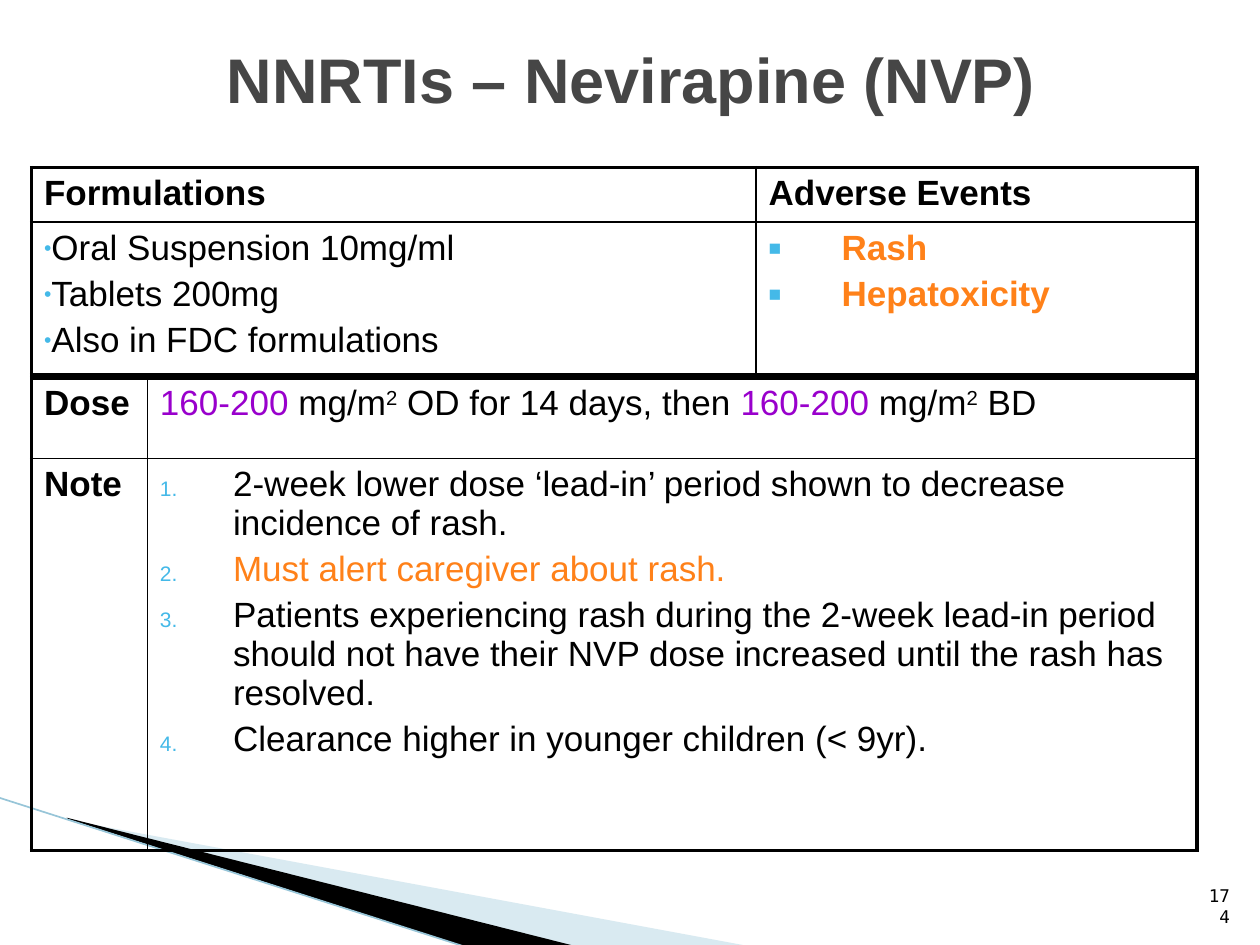
from lxml.etree import SubElement
from pptx import Presentation
from pptx.dml.color import RGBColor
from pptx.enum.shapes import MSO_CONNECTOR as Connector
from pptx.enum.text import MSO_ANCHOR as Anchor, PP_ALIGN as Align
from pptx.oxml.ns import qn
from pptx.util import Inches, Pt

COLORS = {"black": "000000", "title": "464646", "alert": "FF8119", "dose": "9900CC",
          "bullet": "44B9E8", "wedge": "A0CBDC", "edge": "97C5D8"}
FONT = "Arial"
HANGING = 0.58


def add_element(parent, tag, **attributes):
    return SubElement(parent, qn(tag), attributes)


def run(text, color="black", bold=False, raised=False):
    return text, color, bold, raised


class SlideBuilder:
    def __init__(self, slide, colors):
        self.slide = slide
        self.colors = colors

    def rgb(self, name):
        return RGBColor.from_string(self.colors[name])

    def wedge(self, points, color, alpha=None):
        points = [(Inches(x), Inches(y)) for x, y in points]
        builder = self.slide.shapes.build_freeform(*points[0])
        builder.add_line_segments(points[1:], close=True)
        shape = builder.convert_to_shape()
        shape.shadow.inherit = False
        shape.fill.solid()
        shape.fill.fore_color.rgb = self.rgb(color)
        shape.line.fill.background()
        if alpha:
            color_element = shape._element.spPr.find(".//" + qn("a:srgbClr"))
            add_element(color_element, "a:alpha", val=str(alpha * 1000))

    def line(self, start, end, color, width):
        ends = [Inches(value) for value in (*start, *end)]
        connector = self.slide.shapes.add_connector(Connector.STRAIGHT, *ends)
        connector.line.color.rgb = self.rgb(color)
        connector.line.width = Pt(width)
        add_element(connector._element.spPr, "a:effectLst")

    def text(self, box, text, size, font, color, align, anchor, bold=False):
        shape = self.slide.shapes.add_textbox(*[Inches(value) for value in box])
        text_frame = shape.text_frame
        text_frame.word_wrap = True
        text_frame.vertical_anchor = anchor
        text_frame.text = text
        paragraph = text_frame.paragraphs[0]
        paragraph.alignment = align
        self.style(paragraph.runs[0].font, size, font, color, bold)

    def style(self, font, size, name, color, bold):
        font.size = Pt(size)
        font.name = name
        font.bold = bold
        font.color.rgb = self.rgb(color)

    def bullet(self, paragraph, mark, indent):
        properties = paragraph._p.get_or_add_pPr()
        properties.set("marL", str(Inches(indent)))
        properties.set("indent", str(-Inches(indent)))
        color = add_element(properties, "a:buClr")
        add_element(color, "a:srgbClr", val=self.colors["bullet"])
        add_element(properties, "a:buSzPct", val="60000")
        add_element(properties, "a:buFont", typeface=FONT)
        if mark == "number":
            add_element(properties, "a:buAutoNum", type="arabicPeriod")
        else:
            add_element(properties, "a:buChar", char=mark)

    def borders(self, cell, outer_sides):
        properties = cell._tc.get_or_add_tcPr()
        for side in "LRTB":
            width = Pt(2.25 if side in outer_sides else 1)
            border = add_element(properties, f"a:ln{side}", w=str(width))
            fill = add_element(border, "a:solidFill")
            add_element(fill, "a:srgbClr", val=self.colors["black"])

    def fill_cell(self, cell, paragraphs, mark=None, indent=0):
        for index, runs in enumerate(paragraphs):
            text_frame = cell.text_frame
            paragraph = text_frame.add_paragraph() if index else text_frame.paragraphs[0]
            if mark:
                self.bullet(paragraph, mark, indent)
            if index:
                paragraph.space_before = Pt(4)
            for text, color, bold, raised in runs:
                text_run = paragraph.add_run()
                text_run.text = text
                self.style(text_run.font, 20, FONT, color, bold)
                if raised:
                    text_run._r.get_or_add_rPr().set("baseline", "30000")

    def table(self, box, widths, heights, rows):
        frame = self.slide.shapes.add_table(len(heights), len(widths),
                                            *[Inches(value) for value in box])
        table = frame.table
        table.first_row = table.horz_banding = False
        for column, width in zip(table.columns, widths):
            column.width = Inches(width)
        for row, height in zip(table.rows, heights):
            row.height = Inches(height)
        for row_index, row in enumerate(rows):
            for column_index, content in enumerate(row):
                cell = table.cell(row_index, column_index)
                self.borders(cell, "LR"[column_index] + "TB"[row_index])
                cell.fill.background()
                self.fill_cell(cell, *content)


def main():
    presentation = Presentation()
    presentation.slide_width, presentation.slide_height = Inches(10), Inches(7.5)
    slide = presentation.slides.add_slide(presentation.slide_layouts[6])
    builder = SlideBuilder(slide, COLORS)

    builder.wedge([(0.55, 6.51), (5.95, 7.51), (4.56, 7.51), (0.55, 6.5)], "wedge", 40)
    builder.wedge([(0.53, 6.49), (4.57, 7.51), (3.72, 7.52), (0.54, 6.5)], "black")
    builder.line((-0.01, 6.33), (3.71, 7.52), "edge", 0.95)
    builder.text((9.46, 7.01, 0.4, 0.4), "174", 10, "DejaVu Sans Mono", "black",
                 Align.RIGHT, Anchor.BOTTOM)
    builder.text((0.58, 0, 9, 1.25), "NNRTIs – Nevirapine (NVP) ", 36, FONT, "title",
                 Align.CENTER, Anchor.MIDDLE, bold=True)

    formulations = ["Oral Suspension 10mg/ml", "Tablets 200mg", "Also in FDC formulations"]
    events = ["Rash", "Hepatoxicity"]
    builder.table((0.25, 1.33, 9.25, 1.22), (5.75, 3.5), (0.32, 0.9), [
        [([[run("Formulations", bold=True)]],), ([[run("Adverse Events", bold=True)]],)],
        [([[run(text)] for text in formulations], "•"),
         ([[run(text, "alert", True)] for text in events], "■", HANGING)],
    ])

    amount = [run("160-200", "dose"), run(" mg/m"), run("2", raised=True)]
    dose = [*amount, run(" OD for 14 days, then "), *amount, run(" BD")]
    notes = [
        run("2-week lower dose ‘lead-in’ period shown to decrease incidence of rash."),
        run("Must alert caregiver about rash.", "alert"),
        run("Patients experiencing rash during the 2-week lead-in period should not have "
            "their NVP dose increased until the rash has resolved."),
        run("Clearance higher in younger children (< 9yr)."),
    ]
    builder.table((0.25, 3, 9.25, 3.75), (0.92, 8.33), (0.64, 3.11), [
        [([[run("Dose", bold=True)]],), ([dose],)],
        [([[run("Note", bold=True)]],), ([[note] for note in notes], "number", HANGING)],
    ])

    presentation.save("out.pptx")


if __name__ == "__main__":
    main()
